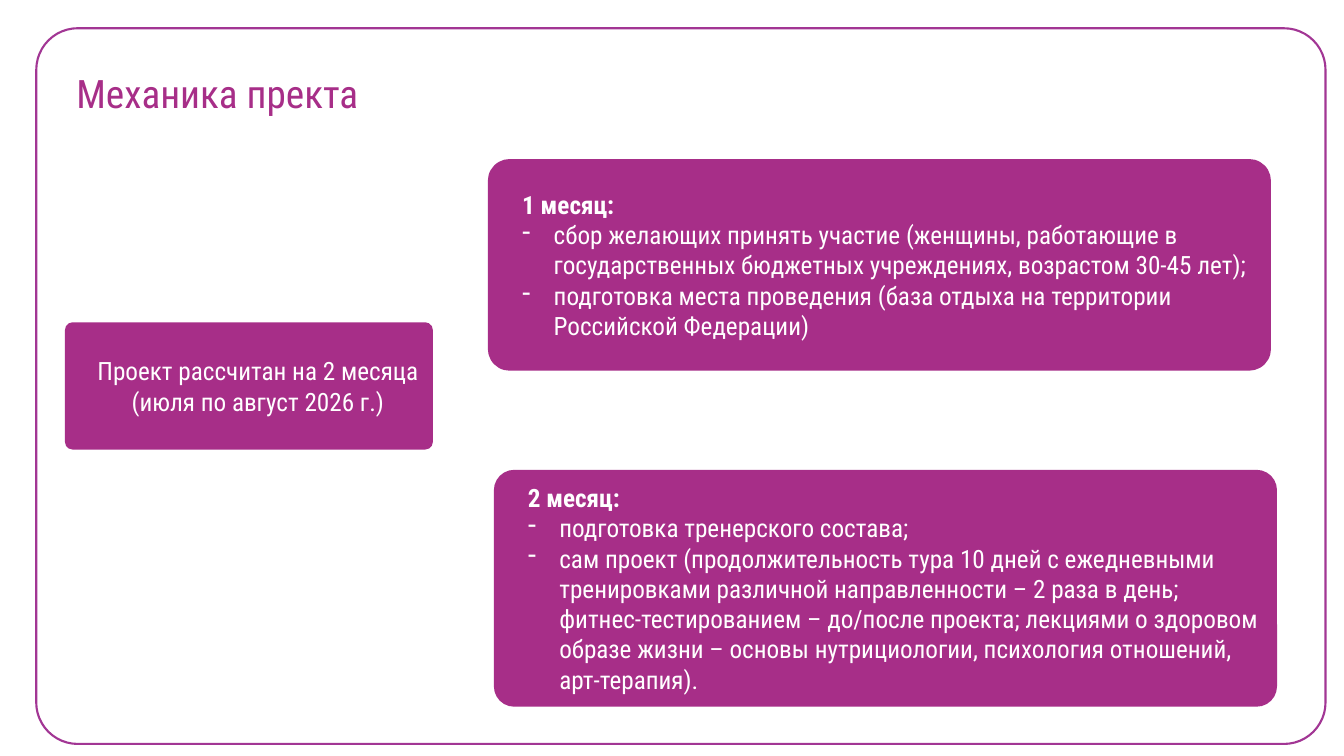
from lxml import etree
from pptx import Presentation
from pptx.dml.color import RGBColor
from pptx.enum.shapes import MSO_SHAPE
from pptx.enum.text import MSO_ANCHOR, MSO_AUTO_SIZE, PP_ALIGN
from pptx.oxml.ns import qn
from pptx.util import Pt

ROUNDED = MSO_SHAPE.ROUNDED_RECTANGLE
MIDDLE = MSO_ANCHOR.MIDDLE
LEFT, CENTER = PP_ALIGN.LEFT, PP_ALIGN.CENTER
FIT_SHAPE = MSO_AUTO_SIZE.SHAPE_TO_FIT_TEXT

COLORS = {"frame": "A23694", "accent": "A72E88", "text": "FFFFFF"}
FONT = "Roboto Condensed"
BULLET_INDENT = Pt(22.5)
CARD_FRAME = {
    "word_wrap": True,
    "vertical_anchor": MIDDLE,
    "margin_left": Pt(20),
    "margin_right": Pt(7.2),
    "margin_top": Pt(3.6),
    "margin_bottom": Pt(3.6),
}

# Left, top, width, height in points, then corner rounding
FRAME = (25.9, 20.2, 920.9, 511.2), 0.058
TERM_CARD = (46.4, 230.2, 262.8, 90.9), 0.06
MONTH_CARDS = [
    ((348.5, 113.6, 559.4, 151.2), 0.103, "1 месяц:", [
        "сбор желающих принять участие (женщины, работающие в государственных "
        "бюджетных учреждениях, возрастом 30-45 лет);",
        "подготовка места проведения (база отдыха на территории Российской Федерации)",
    ]),
    ((352.8, 335.6, 559.4, 169.2), 0.086, "2 месяц:", [
        "подготовка тренерского состава;",
        "сам проект (продолжительность тура 10 дней с ежедневными тренировками "
        "различной направленности – 2 раза в день; фитнес-тестированием – до/после "
        "проекта; лекциями о здоровом образе жизни – основы нутрициологии, "
        "психология отношений, арт-терапия).",
    ]),
]


def color(name):
    return RGBColor.from_string(COLORS[name])


def set_values(target, values):
    for name, value in values.items():
        setattr(target, name, value)


def write_line(para, text, size=18, shade="text", bold=False, align=LEFT):
    para.alignment = align
    span = para.add_run()
    span.text = text
    set_values(span.font, {"name": FONT, "size": Pt(size), "bold": bold})
    span.font.color.rgb = color(shade)


def add_bullet(para):
    properties = para._p.get_or_add_pPr()
    properties.set("marL", str(BULLET_INDENT))
    properties.set("indent", str(-BULLET_INDENT))
    etree.SubElement(properties, qn("a:buChar")).set("char", "-")


def add_rounded(page, place, rounding):
    box = page.shapes.add_shape(ROUNDED, *map(Pt, place))
    box.adjustments[0] = rounding
    box.shadow.inherit = False
    return box


def add_frame(page, place, rounding):
    box = add_rounded(page, place, rounding)
    box.fill.background()
    box.line.color.rgb = color("frame")
    box.line.width = Pt(1.5)


def add_title(page, text):
    box = page.shapes.add_textbox(Pt(47.5), Pt(46.1), Pt(611.3), Pt(41))
    set_values(box.text_frame, {"word_wrap": True, "auto_size": FIT_SHAPE})
    write_line(box.text_frame.paragraphs[0], text, 28, "accent")


def add_card(page, place, rounding):
    box = add_rounded(page, place, rounding)
    box.fill.solid()
    box.fill.fore_color.rgb = color("accent")
    box.line.fill.background()
    set_values(box.text_frame, CARD_FRAME)
    return box.text_frame


def add_term_card(page, lines):
    frame = add_card(page, *TERM_CARD)
    write_line(frame.paragraphs[0], lines[0], align=CENTER)
    for line in lines[1:]:
        write_line(frame.add_paragraph(), line, align=CENTER)


def add_month_card(page, place, rounding, heading, tasks):
    frame = add_card(page, place, rounding)
    write_line(frame.paragraphs[0], heading, bold=True)
    for task in tasks:
        para = frame.add_paragraph()
        add_bullet(para)
        write_line(para, task)


def main():
    deck = Presentation()
    deck.slide_width, deck.slide_height = Pt(960), Pt(540)
    page = deck.slides.add_slide(deck.slide_layouts[6])

    # Border and title
    add_frame(page, *FRAME)
    add_title(page, "Механика пректа")

    # Project term and monthly plan
    add_term_card(page, ["Проект рассчитан на 2 месяца", "(июля по август 2026 г.)"])
    for card in MONTH_CARDS:
        add_month_card(page, *card)

    deck.save("out.pptx")


if __name__ == "__main__":
    main()
